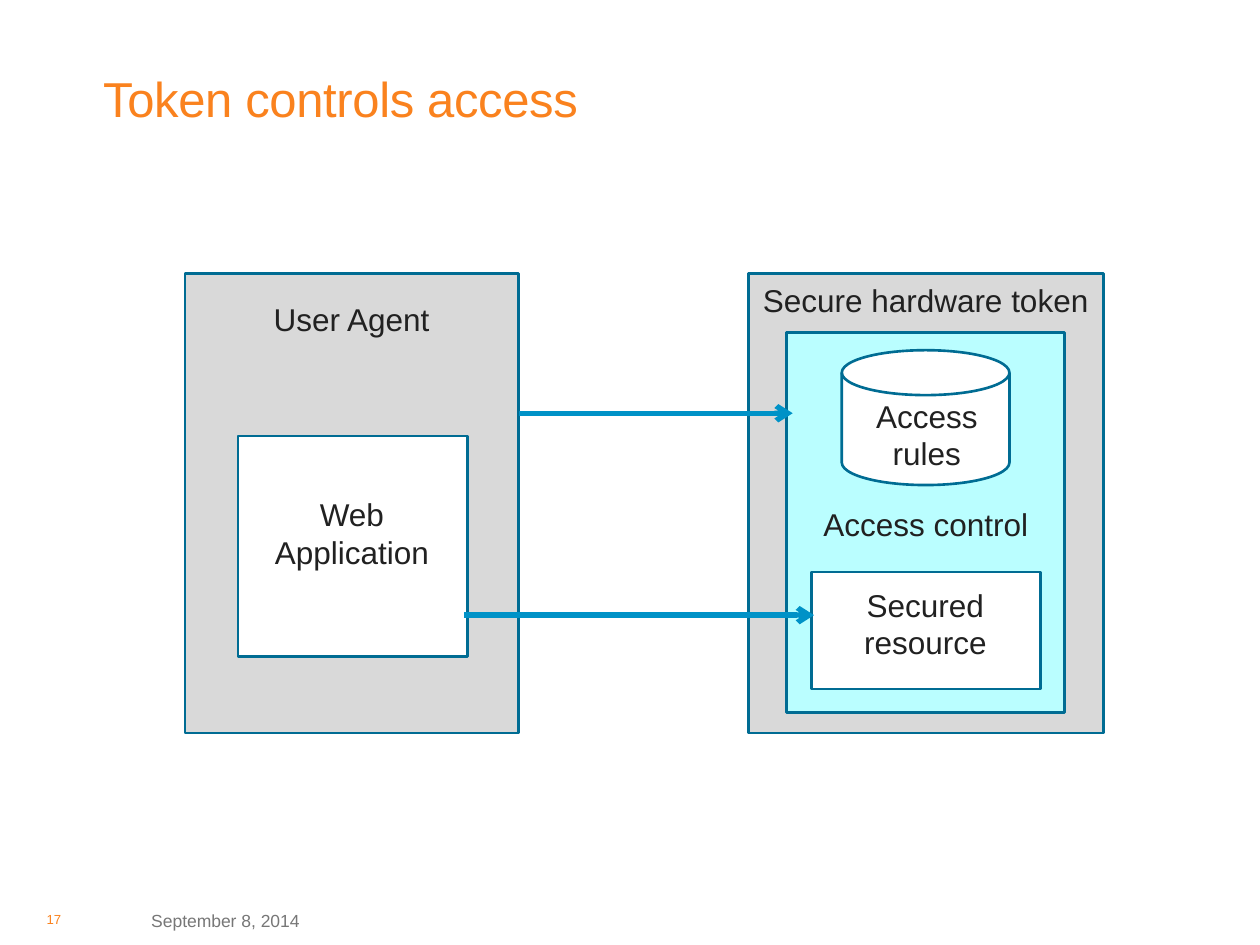
from lxml.etree import SubElement as Sub
from pptx import Presentation
from pptx.dml.color import RGBColor
from pptx.enum.shapes import MSO_CONNECTOR as Link, MSO_SHAPE as Kind
from pptx.enum.text import MSO_ANCHOR as Anchor, MSO_AUTO_SIZE as Fit, PP_ALIGN as Align
from pptx.oxml.ns import qn
from pptx.util import Cm, Pt

GREY, WHITE, CYAN = "D9D9D9", "FFFFFF", "BAFEFF"
EDGE, BLUE, INK = "006C93", "0092C7", "212121"
ORANGE, DIM = "FA821E", "777777"


def tint(part, color):
    """Give a font or fill a solid colour."""
    if hasattr(part, "solid"):
        part.solid()
        part.fore_color.rgb = RGBColor.from_string(color)
    else:
        part.color.rgb = RGBColor.from_string(color)


def inside(box, x, y, w, h):
    """Shift a part by the corner of its region, in centimetres."""
    return box[0] + x, box[1] + y, w, h


def write(shape, text, size=18, color=INK, align=Align.LEFT, anchor=Anchor.TOP,
          inset=None, wrap=True, fit=Fit.NONE, gap=None):
    """Fill a shape with one formatted paragraph."""
    frame = shape.text_frame
    frame.word_wrap, frame.auto_size, frame.vertical_anchor = wrap, fit, anchor
    if inset is not None:
        frame.margin_left = frame.margin_right = Cm(inset)
        frame.margin_top = frame.margin_bottom = Cm(inset)
    para = frame.paragraphs[0]
    para.alignment = align
    run = para.add_run()
    run.text = text
    run.font.name, run.font.size = "Arial", Pt(size)
    tint(run.font, color)
    if gap is not None:
        run.font._element.set("spc", str(gap))


def label(slide, box, text, **style):
    """Add a text box."""
    write(slide.shapes.add_textbox(*map(Cm, box)), text, **style)


def name(slide, box, text, wrap=True):
    """Add a centred caption that grows with its text."""
    label(slide, box, text, align=Align.CENTER, wrap=wrap, fit=Fit.SHAPE_TO_FIT_TEXT)


def block(slide, box, color, kind=Kind.RECTANGLE):
    """Add an outlined shape."""
    shape = slide.shapes.add_shape(kind, *map(Cm, box))
    shape.shadow.inherit = False
    tint(shape.fill, color)
    tint(shape.line.fill, EDGE)
    shape.line.width = Pt(1.5)


def arrow(slide, left, right, y):
    """Add a level arrow pointing right."""
    line = slide.shapes.add_connector(Link.STRAIGHT, Cm(left), Cm(y), Cm(right), Cm(y))
    tint(line.line.fill, BLUE)
    line.line.width = Pt(3)
    Sub(line.line._get_or_add_ln(), qn("a:tailEnd"), type="arrow")
    Sub(line._element.spPr, qn("a:effectLst"))


def head(slide, box, text):
    """Place and format the title."""
    title = slide.shapes.title
    title.left, title.top, title.width, title.height = map(Cm, box)
    write(title, text, size=28, color=ORANGE, anchor=Anchor.BOTTOM, inset=0, gap=-20)


def agent(slide, box):
    """Draw the user agent and its web application."""
    block(slide, box, GREY)
    name(slide, inside(box, 1.52, 0.41, 3.68, 1.02), "User Agent", wrap=False)
    block(slide, inside(box, 1.07, 3.28, 4.62, 4.45), WHITE)
    name(slide, inside(box, 1.32, 4.34, 4.09, 1.8), "Web Application")


def token(slide, box):
    """Draw the hardware token with its access control."""
    block(slide, box, GREY)
    name(slide, inside(box, 0, 0.03, 7.14, 1.02), "Secure hardware token", wrap=False)
    block(slide, inside(box, 0.76, 1.19, 5.61, 7.67), CYAN)
    block(slide, inside(box, 1.88, 1.55, 3.38, 2.72), WHITE, Kind.FLOWCHART_MAGNETIC_DISK)
    name(slide, inside(box, 2.11, 2.36, 2.97, 1.8), "Access rules")
    name(slide, inside(box, 1.24, 4.55, 4.67, 1.02), "Access control", wrap=False)
    block(slide, inside(box, 1.27, 6.02, 4.62, 2.36), WHITE)
    name(slide, inside(box, 1.52, 6.17, 4.09, 1.8), "Secured resource")


def foot(slide, box):
    """Add the page number and date."""
    label(slide, inside(box, 0, 0, 2.34, 1.02), "17", size=7.5, color=ORANGE,
          anchor=Anchor.MIDDLE, inset=0)
    label(slide, inside(box, 2.01, 0.03, 7.92, 0.99), "September 8, 2014", size=10,
          color=DIM, anchor=Anchor.MIDDLE, inset=0.1)


def main():
    """Build and save the slide."""
    deck = Presentation()
    deck.slide_width, deck.slide_height = Cm(25.4), Cm(19.05)
    slide = deck.slides.add_slide(deck.slide_layouts[5])
    tint(slide.background.fill, WHITE)
    head(slide, (2.08, 1.22, 21.06, 1.35), "Token controls access")
    agent(slide, (3.73, 5.51, 6.73, 9.27))
    token(slide, (15.09, 5.51, 7.16, 9.27))
    arrow(slide, 10.46, 15.98, 8.33)
    arrow(slide, 9.35, 16.41, 12.4)
    foot(slide, (0.94, 18.03, 9.93, 1.02))
    deck.save("out.pptx")


if __name__ == "__main__":
    main()
